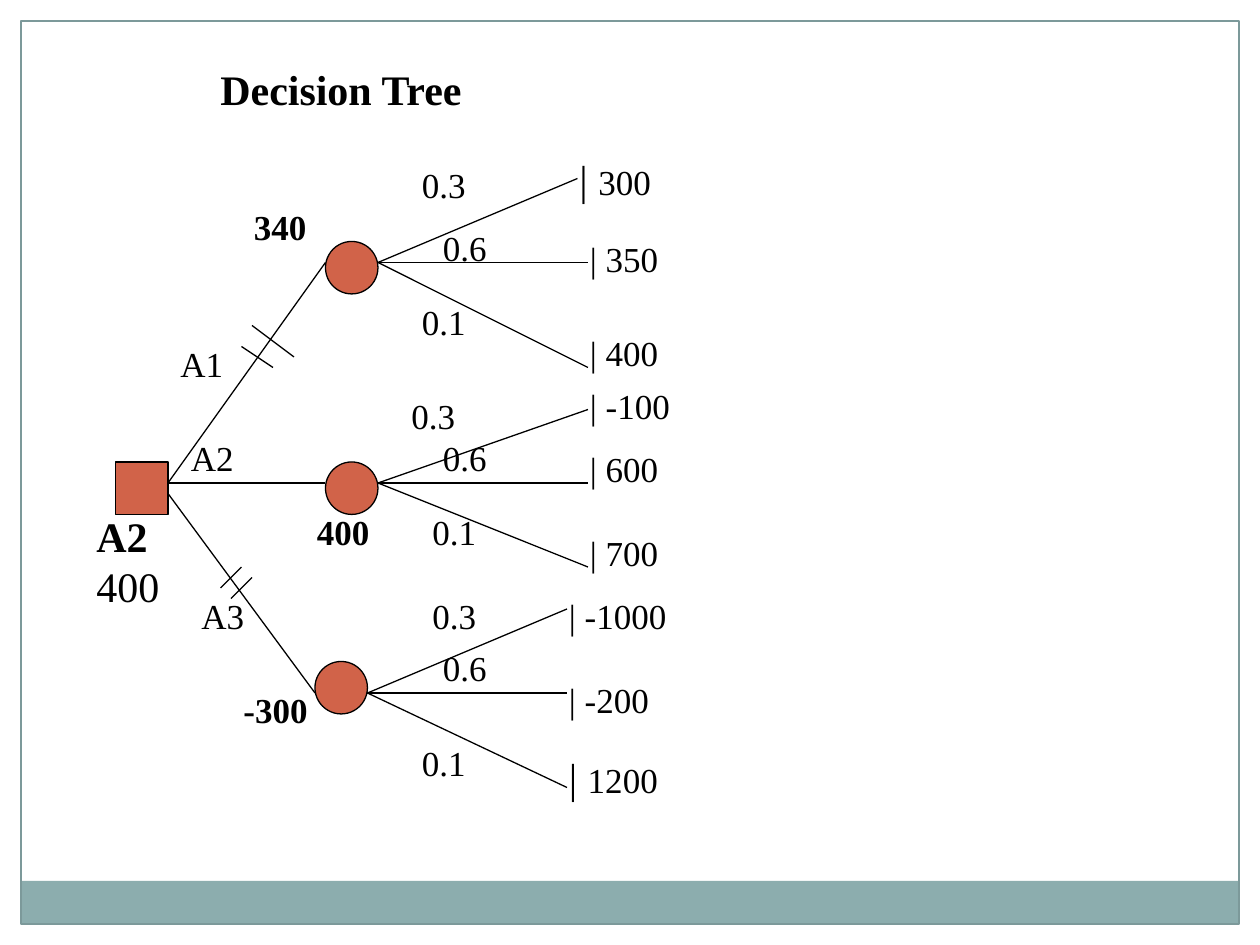
from pptx import Presentation
from pptx.dml.color import RGBColor
from pptx.enum.shapes import MSO_CONNECTOR, MSO_SHAPE
from pptx.enum.text import MSO_AUTO_SIZE
from pptx.oxml.ns import qn
from pptx.util import Inches, Pt
from lxml import etree

RECTANGLE = MSO_SHAPE.RECTANGLE
OVAL = MSO_SHAPE.OVAL
STRAIGHT = MSO_CONNECTOR.STRAIGHT
FIT_SHAPE = MSO_AUTO_SIZE.SHAPE_TO_FIT_TEXT

COLUMNS, ROWS = 120, 90
CELL = 1 / 12  # inches
NODE = 5  # cells
FONT = "Times New Roman"
BLACK, RUST, TEAL, FRAME = "000000", "D16349", "8CADAE", "7C999A"

# Character widths in ems; any other character is half an em.
CHAR_WIDTHS = {"|": 0.2, " ": 0.25, ".": 0.25, "-": 0.33, "A": 0.72,
               "D": 0.72, "T": 0.67, "e": 0.44, "c": 0.44, "r": 0.44,
               "i": 0.28, "s": 0.39, "n": 0.56}

ROOT = (11, 44)
PROBABILITIES = ("0.3", "0.6", "0.1")

# Each outcome: value, its cell, size of its bar, end of its branch.
ALTERNATIVES = [
    {"name": ("A1", 16, 32), "value": ("340", 23, 19), "node": (31, 23),
     "stem": ((16, 46), (31, 25)), "fork": (36, 25),
     "chances": [(39, 15), (41, 21), (39, 28)],
     "outcomes": [("300", (54, 14), 24, (55, 17)),
                  ("350", (55, 22), 20, (56, 25)),
                  ("400", (55, 31), 20, (56, 35))],
     "cuts": [((23, 33), (26, 35)), ((24, 31), (28, 34))]},
    {"name": ("A2", 17, 41), "value": ("400", 29, 48), "node": (31, 44),
     "stem": ((16, 46), (31, 46)), "fork": (36, 46),
     "chances": [(38, 37), (41, 41), (40, 48)],
     "outcomes": [("-100", (55, 36), 20, (56, 39)),
                  ("600", (55, 42), 20, (56, 46)),
                  ("700", (55, 50), 20, (56, 54))],
     "cuts": []},
    {"name": ("A3", 18, 56), "value": ("-300", 22, 65), "node": (30, 63),
     "stem": ((16, 47), (30, 66)), "fork": (35, 66),
     "chances": [(40, 56), (41, 61), (39, 70)],
     "outcomes": [("-1000", (53, 56), 20, (54, 58)),
                  ("-200", (53, 64), 20, (54, 66)),
                  ("1200", (53, 71), 24, (54, 75))],
     "cuts": [((23, 54), (21, 56)), ((24, 55), (22, 57))]},
]


def color(hex_string):
    return RGBColor.from_string(hex_string)


def cells(count):
    return Inches(count * CELL)


def add_figure(page, kind, column, row, width, height, fill=None, line=None):
    figure = page.shapes.add_shape(
        kind, cells(column), cells(row), cells(width), cells(height))
    figure.shadow.inherit = False
    if fill:
        figure.fill.solid()
        figure.fill.fore_color.rgb = color(fill)
    else:
        figure.fill.background()
    if line:
        figure.line.color.rgb = color(line)
        figure.line.width = Pt(0.75)
    else:
        figure.line.fill.background()


def add_line(page, start, end):
    line = page.shapes.add_connector(
        STRAIGHT, *(cells(count) for count in (*start, *end)))
    line.line.color.rgb = color(BLACK)
    line.line.width = Pt(0.75)
    etree.SubElement(line._element.spPr, qn("a:effectLst"))


def span_width(text, size):
    return sum(CHAR_WIDTHS.get(char, 0.5) for char in text) * size / 72


def add_text(page, column, row, *paragraphs):
    """Place paragraphs, each a list of spans (text, size, bold)."""
    width = max(sum(span_width(text, size) for text, size, _ in spans)
                for spans in paragraphs)
    height = sum(max(size for _, size, _ in spans) * 1.2 / 72
                 for spans in paragraphs)
    box = page.shapes.add_textbox(cells(column), cells(row),
                                  Inches(width + 0.2), Inches(height + 0.1))
    frame = box.text_frame
    frame.word_wrap = False
    frame.auto_size = FIT_SHAPE
    for index, spans in enumerate(paragraphs):
        para = frame.add_paragraph() if index else frame.paragraphs[0]
        for text, size, bold in spans:
            span = para.add_run()
            span.text = text
            span.font.name = FONT
            span.font.size = Pt(size)
            span.font.bold = bold
            span.font.color.rgb = color(BLACK)


def add_label(page, text, column, row, size=20, bold=False):
    add_text(page, column, row, [(text, size, bold)])


def add_alternative(page, branch):
    add_line(page, *branch["stem"])
    add_figure(page, OVAL, *branch["node"], NODE, NODE, RUST, BLACK)
    add_label(page, *branch["name"])
    add_label(page, *branch["value"], bold=True)
    for probability, chance, outcome in zip(
            PROBABILITIES, branch["chances"], branch["outcomes"]):
        value, place, bar_size, end = outcome
        add_line(page, branch["fork"], end)
        add_label(page, probability, *chance)
        add_text(page, *place, [("| ", bar_size, False), (value, 20, False)])
    for start, end in branch["cuts"]:
        add_line(page, start, end)


def main():
    deck = Presentation()
    deck.slide_width, deck.slide_height = cells(COLUMNS), cells(ROWS)
    page = deck.slides.add_slide(deck.slide_layouts[6])

    margin = 2
    inner_width = COLUMNS - 2 * margin
    add_figure(page, RECTANGLE, margin, 83.9, inner_width, 4.1, TEAL)
    add_figure(page, RECTANGLE, margin, margin, inner_width,
               ROWS - 2 * margin, line=FRAME)

    add_label(page, "Decision Tree", 19.8, 5.5, size=24, bold=True)
    add_figure(page, RECTANGLE, *ROOT, NODE, NODE, RUST, BLACK)
    add_text(page, 8, 48, [("A2", 24, True)], [("400", 24, False)])
    for branch in ALTERNATIVES:
        add_alternative(page, branch)

    deck.save("out.pptx")


if __name__ == "__main__":
    main()
